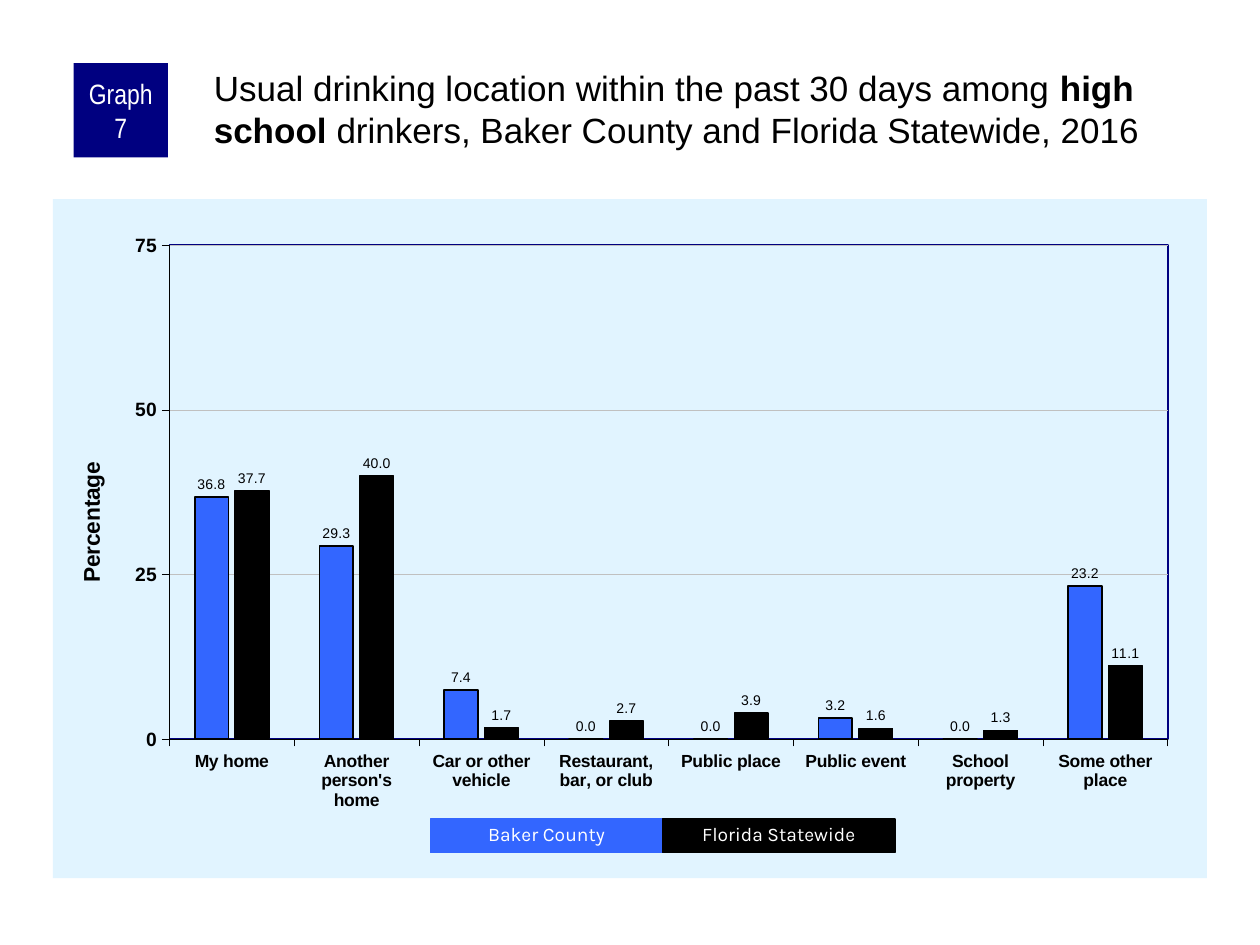
import pptx
import pptx.chart.data
import pptx.dml.color
import pptx.enum.chart
import pptx.enum.shapes
import pptx.enum.text
import pptx.oxml
import pptx.util

Pt = pptx.util.Pt
RGB = pptx.dml.color.RGBColor
Kind = pptx.enum.chart
Text = pptx.enum.text

WHITE = RGB(0xFF, 0xFF, 0xFF)
BLACK = RGB(0, 0, 0)
NAVY = RGB(0, 0, 0x80)
BLUE = RGB(0x33, 0x66, 0xFF)
PALE = RGB(0xE1, 0xF4, 0xFF)
GRAY = RGB(0xC0, 0xC0, 0xC0)
NS = 'xmlns:c="http://schemas.openxmlformats.org/drawingml/2006/chart" ' \
     'xmlns:a="http://schemas.openxmlformats.org/drawingml/2006/main"'


def style(font, size, name="Arial", color=BLACK, bold=False):
    font.size, font.name, font.bold = Pt(size), name, bold
    font.color.rgb = color


def add_box(left, top, width, height, fill, label, size, face):
    """Add a filled rectangle with centred white text and return it."""
    box = slide.shapes.add_shape(pptx.enum.shapes.MSO_SHAPE.RECTANGLE,
                                 Pt(left), Pt(top), Pt(width), Pt(height))
    box.shadow.inherit = False
    box.fill.solid()
    box.fill.fore_color.rgb = fill
    box.line.fill.background()
    box.text_frame.word_wrap = True
    para = box.text_frame.paragraphs[0]
    para.alignment = Text.PP_ALIGN.CENTER
    run = para.add_run()
    run.text = label
    style(run.font, size, face, WHITE)
    return box


deck = pptx.Presentation()
deck.slide_width, deck.slide_height = Pt(720), Pt(540)
slide = deck.slides.add_slide(deck.slide_layouts[6])

# Chart
groups = [
    ("Baker County", BLUE, 1, "0.0", (36.8, 29.3, 7.4, 0, 0, 3.2, 0, 23.2)),
    ("Florida Statewide", BLACK, 0.75, "#,##0.0",
     (37.7, 40, 1.7, 2.7, 3.9, 1.6, 1.3, 11.1)),
]
data = pptx.chart.data.CategoryChartData()
data.categories = ["My home", "Another person's home", "Car or other vehicle",
                   "Restaurant, bar, or club", "Public place", "Public event",
                   "School property", "Some other place"]
for name, color, width, form, values in groups:
    data.add_series(name, values)
chart = slide.shapes.add_chart(Kind.XL_CHART_TYPE.COLUMN_CLUSTERED, Pt(30.2),
                               Pt(113.8), Pt(659.5), Pt(388), data).chart
chart.has_title = chart.has_legend = False
style(chart.font, 11.5)

plot = chart.plots[0]
plot.gap_width, plot.overlap = 150, -20
plot.vary_by_categories = False
for bars, (name, color, width, form, values) in zip(plot.series, groups):
    bars.invert_if_negative = False
    bars.format.fill.solid()
    bars.format.fill.fore_color.rgb = color
    bars.format.line.color.rgb = BLACK
    bars.format.line.width = Pt(width)
    labels = bars.data_labels
    labels.show_value = True
    labels.position = Kind.XL_LABEL_POSITION.OUTSIDE_END
    labels.number_format, labels.number_format_is_linked = form, False
    style(labels.font, 8)

for axis, size in ((chart.category_axis, 10), (chart.value_axis, 11)):
    axis.major_tick_mark = Kind.XL_TICK_MARK.OUTSIDE
    axis.minor_tick_mark = Kind.XL_TICK_MARK.NONE
    axis.format.line.color.rgb = BLACK
    axis.format.line.width = Pt(0.25)
    style(axis.tick_labels.font, size, bold=True)

scale = chart.value_axis
scale.minimum_scale, scale.maximum_scale, scale.major_unit = 0, 75, 25
scale.tick_labels.number_format = "0"
scale.tick_labels.number_format_is_linked = False
grid = scale.major_gridlines.format.line
grid.color.rgb, grid.width = GRAY, Pt(0.25)
run = scale.axis_title.text_frame.paragraphs[0].add_run()
run.text = "Percentage"
style(run.font, 13, bold=True)

# Plot position, plot border and chart background
area = chart.element.chart.plotArea
for old in area.xpath("c:layout"):
    area.remove(old)
spots = "".join(f'<c:{tag} val="{val}"/>' for tag, val in (
    ("layoutTarget", "inner"), ("xMode", "edge"), ("yMode", "edge"),
    ("x", 0.101), ("y", 0.068), ("w", 0.865), ("h", 0.727)))
area.insert(0, pptx.oxml.parse_xml(
    f"<c:layout {NS}><c:manualLayout>{spots}</c:manualLayout></c:layout>"))
area.append(pptx.oxml.parse_xml(
    f'<c:spPr {NS}><a:noFill/><a:ln w="{Pt(1)}"><a:solidFill>'
    f'<a:srgbClr val="{NAVY}"/></a:solidFill></a:ln></c:spPr>'))
chart.element.chart.addnext(pptx.oxml.parse_xml(
    f'<c:spPr {NS}><a:solidFill><a:srgbClr val="{PALE}"/></a:solidFill>'
    "<a:ln><a:noFill/></a:ln></c:spPr>"))

# Heading
badge = add_box(42, 36, 54, 54, NAVY, "Graph 7", 16, "Arial Narrow").text_frame
badge.margin_left = badge.margin_right = Pt(3.6)
badge.margin_top = badge.margin_bottom = 0

title = slide.shapes.add_textbox(Pt(120), Pt(36), Pt(570), Pt(60)).text_frame
title.word_wrap = True
title.margin_left = title.margin_top = Pt(2.2)
title.margin_right = title.margin_bottom = 0
for words, bold in (
        ("Usual drinking location within the past 30 days among ", False),
        ("high school", True),
        (" drinkers, Baker County and Florida Statewide, 2016", False)):
    run = title.paragraphs[0].add_run()
    run.text = words
    style(run.font, 20, bold=bold)

# Legend
for i, (name, color, *rest) in enumerate(groups):
    key = add_box(246 + i * 132.7, 468, 132.7, 19.4, color, name, 11, "Karla")
    key.line.color.rgb, key.line.width = color, Pt(0.75)
    key.text_frame.vertical_anchor = Text.MSO_ANCHOR.TOP
    key.text_frame.auto_size = Text.MSO_AUTO_SIZE.SHAPE_TO_FIT_TEXT
    key.text_frame.paragraphs[0].line_spacing = 0.9

deck.save("out.pptx")
